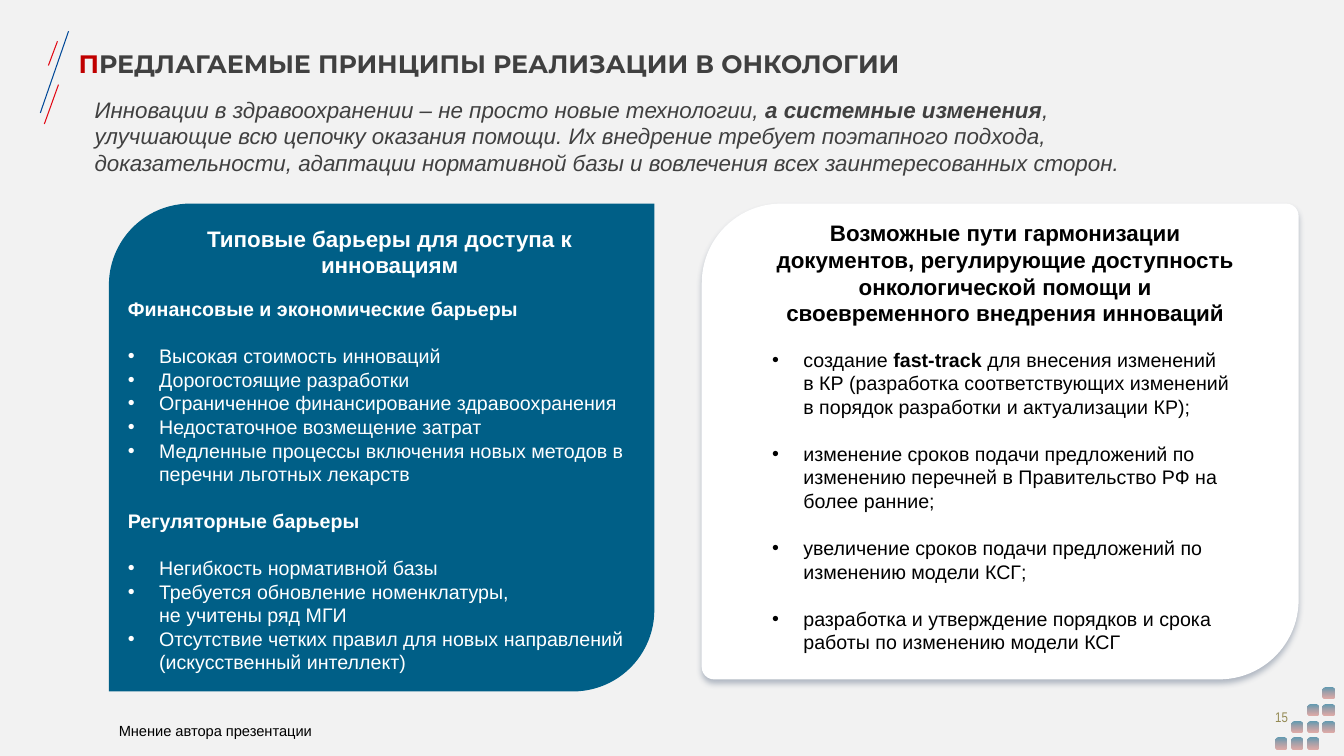
from dataclasses import dataclass

from lxml import etree
from pptx import Presentation
from pptx import util as u
from pptx.dml import color as dml
from pptx.enum import shapes, text
from pptx.oxml import ns

Box = tuple[float, float, float, float]

INK, WHITE, BLACK = "404040", "FFFFFF", "000000"
BLUE, RED = "005F87", "E20713"
BLANK_LINE = 16.8
INDENT = 0.31


@dataclass
class Run:
    words: str
    bold: bool = False
    color: str | None = None


@dataclass
class Para:
    runs: list[Run]
    bullet: bool = False
    before: float = 0


@dataclass
class Stroke:
    start: tuple[float, float]
    end: tuple[float, float]
    color: str


STROKES = [
    Stroke((0.48, 0.65), (0.57, 0.41), RED),
    Stroke((0.4, 1.12), (0.68, 0.31), "004898"),
    Stroke((0.44, 1.23), (0.58, 0.84), RED),
]
TILE_ROWS = [(3,), (2, 3), (1, 2, 3), (0, 1, 2)]


def rgb(value: str) -> dml.RGBColor:
    return dml.RGBColor.from_string(value)


def plain(words: str, bold: bool = False) -> Para:
    return Para([Run(words, bold)])


def section(heading: str, items: list[str], before: float = 0) -> list[Para]:
    bullets = [Para([Run(item)], True, 0 if i else BLANK_LINE)
               for i, item in enumerate(items)]
    return [Para([Run(heading, True)], before=before)] + bullets


def add_bullet(paragraph) -> None:
    props = paragraph._p.get_or_add_pPr()
    props.set("marL", str(u.Inches(INDENT)))
    props.set("indent", str(-u.Inches(INDENT)))
    etree.SubElement(props, ns.qn("a:buFont"), typeface="Arial")
    etree.SubElement(props, ns.qn("a:buChar"), char="•")


def write(frame, paras: list[Para], *, size: float, color: str,
          font: str = "Arial", italic: bool = False,
          align=text.PP_ALIGN.LEFT, anchor=text.MSO_ANCHOR.TOP) -> None:
    frame.word_wrap = True
    frame.auto_size = text.MSO_AUTO_SIZE.NONE
    frame.vertical_anchor = anchor
    for i, para in enumerate(paras):
        paragraph = frame.add_paragraph() if i else frame.paragraphs[0]
        if para.bullet:
            add_bullet(paragraph)
        paragraph.alignment = align
        paragraph.space_before = u.Pt(para.before)
        for part in para.runs:
            for j, line in enumerate(part.words.split("\n")):
                if j:
                    paragraph.add_line_break()
                run = paragraph.add_run()
                run.text = line
                run.font.name = font
                run.font.size = u.Pt(size)
                run.font.bold = part.bold
                run.font.italic = italic
                run.font.color.rgb = rgb(part.color or color)


def add_text(slide, box: Box, paras: list[Para], **style) -> None:
    frame = slide.shapes.add_textbox(*map(u.Inches, box)).text_frame
    write(frame, paras, **style)


def add_stroke(slide, stroke: Stroke) -> None:
    line = slide.shapes.add_connector(
        shapes.MSO_CONNECTOR.STRAIGHT,
        *map(u.Inches, stroke.start + stroke.end))
    line.line.color.rgb = rgb(stroke.color)
    line.line.width = u.Pt(0.75)
    etree.SubElement(line._element.spPr, ns.qn("a:effectLst"))


def add_panel(slide, kind, box: Box, fill: str):
    panel = slide.shapes.add_shape(kind, *map(u.Inches, box))
    panel.shadow.inherit = False
    panel.line.fill.background()
    panel.fill.solid()
    panel.fill.fore_color.rgb = rgb(fill)
    return panel


def add_tile(slide, column: int, row: int) -> None:
    box = (12.65 + column * 0.157, 6.82 + row * 0.167, 0.11, 0.11)
    tile = add_panel(slide, shapes.MSO_SHAPE.ROUNDED_RECTANGLE, box, BLUE)
    tile.fill.gradient()
    tile.fill.gradient_angle = 270
    looks = [(0, BLUE, 60), (1, "C3443B", 40)]
    for stop, (position, color, _) in zip(tile.fill.gradient_stops, looks):
        stop.position = position
        stop.color.rgb = rgb(color)
    colors = tile._element.spPr.iter(ns.qn("a:srgbClr"))
    for node, (_, _, opacity) in zip(list(colors), looks):
        etree.SubElement(node, ns.qn("a:alpha"), val=str(opacity * 1000))


def add_shadow(panel) -> None:
    effects = panel._element.spPr.find(ns.qn("a:effectLst"))
    shadow = etree.SubElement(
        effects, ns.qn("a:outerShdw"), blurRad=str(u.Pt(4)),
        dist=str(u.Pt(3)), dir="5400000", algn="t", rotWithShape="0")
    tint = etree.SubElement(shadow, ns.qn("a:srgbClr"), val="4C5E79")
    etree.SubElement(tint, ns.qn("a:alpha"), val="40000")


def main() -> None:
    deck = Presentation()
    deck.slide_width, deck.slide_height = u.Inches(13.33), u.Inches(7.5)
    slide = deck.slides.add_slide(deck.slide_layouts[5])
    slide.background.fill.solid()
    slide.background.fill.fore_color.rgb = rgb("F2F2F2")
    center, middle = text.PP_ALIGN.CENTER, text.MSO_ANCHOR.MIDDLE

    for stroke in STROKES:
        add_stroke(slide, stroke)
    for row, columns in enumerate(TILE_ROWS):
        for column in columns:
            add_tile(slide, column, row)

    title = slide.shapes.title
    title.left, title.top, title.width, title.height = map(
        u.Inches, (0.68, 0.21, 10.81, 0.84))
    write(title.text_frame, [Para([
        Run("П", True, "C00000"),
        Run("РЕДЛАГАЕМЫЕ ПРИНЦИПЫ РЕАЛИЗАЦИИ В ОНКОЛОГИИ", True),
    ])], size=18, color=INK, font="Montserrat", anchor=middle)
    add_text(slide, (12.52, 6.91, 0.38, 0.4), [plain("15")], size=10,
             color="948A54", font="Arial Narrow", align=center, anchor=middle)

    diagonal = shapes.MSO_SHAPE.ROUND_2_DIAG_RECTANGLE
    add_panel(slide, diagonal, (1.08, 2.02, 5.41, 4.84), BLUE)
    solutions = add_panel(slide, diagonal, (6.96, 2.02, 5.92, 4.72), WHITE)
    solutions.adjustments[0] = 0.167
    solutions.adjustments[1] = 0.026
    add_shadow(solutions)

    add_text(slide, (0.84, 0.9, 11.07, 0.91), [Para([
        Run("Инновации в здравоохранении – не просто новые технологии, "),
        Run("а системные изменения", True),
        Run(", улучшающие всю цепочку оказания помощи. Их внедрение требует "
            "поэтапного подхода, доказательности, адаптации нормативной базы "
            "и вовлечения всех заинтересованных сторон."),
    ])], size=16, color=INK, italic=True)

    barriers = section("Финансовые и экономические барьеры", [
        "Высокая стоимость инноваций",
        "Дорогостоящие разработки",
        "Ограниченное финансирование здравоохранения",
        "Недостаточное возмещение затрат",
        "Медленные процессы включения новых методов в перечни льготных лекарств",
    ]) + section("Регуляторные барьеры", [
        "Негибкость нормативной базы",
        "Требуется обновление номенклатуры,\nне учитены ряд МГИ",
        "Отсутствие четких правил для новых направлений "
        "(искусственный интеллект)",
    ], BLANK_LINE)
    add_text(slide, (1.17, 2.9, 5.56, 4.34), barriers, size=14, color=WHITE)
    add_text(slide, (1.55, 2.18, 4.63, 0.64),
             [plain("Типовые барьеры для доступа к инновациям", True)],
             size=16, color=WHITE, align=center)

    add_text(slide, (7.59, 2.33, 4.76, 0.75), [plain(
        "Возможные пути гармонизации документов, регулирующие доступность "
        "онкологической помощи и своевременного внедрения инноваций", True)],
        size=16, color=BLACK, align=center, anchor=middle)
    fast_track = [
        Run("создание "), Run("fast-track ", True),
        Run("для внесения изменений в КР (разработка соответствующих "
            "изменений в порядок разработки и актуализации КР);")]
    further_steps = [
        "изменение сроков подачи предложений по изменению перечней "
        "в Правительство РФ на более ранние;",
        "увеличение сроков подачи предложений по изменению модели КСГ;",
        "разработка и утверждение порядков и срока работы "
        "по изменению модели КСГ"]
    add_text(slide, (7.56, 3.4, 4.76, 3.16), [Para(fast_track, True)] + [
        Para([Run(step)], True, BLANK_LINE) for step in further_steps],
        size=14, color=BLACK)

    add_text(slide, (1.08, 7.11, 6.67, 0.28),
             [plain("Мнение автора презентации")], size=10.5, color=BLACK)
    deck.save("out.pptx")


if __name__ == "__main__":
    main()
